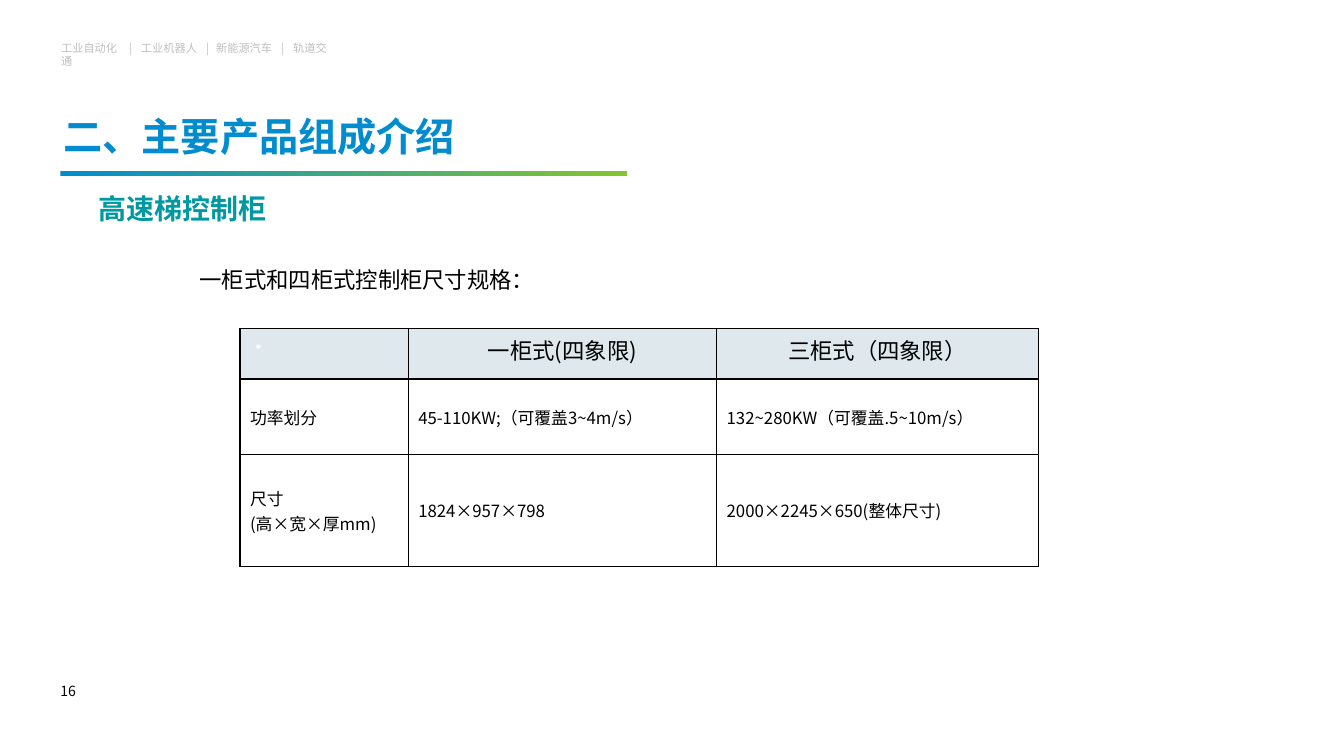
from dataclasses import dataclass

from lxml.etree import SubElement
from pptx import Presentation
from pptx.dml.color import RGBColor
from pptx.enum.shapes import MSO_SHAPE
from pptx.enum.text import MSO_ANCHOR, PP_ALIGN
from pptx.oxml.ns import qn
from pptx.util import Pt


@dataclass(frozen=True)
class Theme:
    font: str = "Noto Sans CJK SC"
    blue: str = "008CCF"
    green: str = "85C52F"
    teal: str = "0099A1"
    grey: str = "BFBFBF"
    black: str = "000000"
    white: str = "FFFFFF"
    header_fill: str = "DFE9ED"
    tiny: float = 8
    small: float = 10
    body: float = 12
    large: float = 16
    subtitle: float = 20
    title: float = 28


THEME = Theme()
SECTORS = ["工业自动化", "工业机器人", "新能源汽车", "轨道交通"]
SECTOR_TABS = [48.6, 57.1, 103.6, 110.7, 157.1, 165.7]
SPECS = [
    ["·", "一柜式(四象限)", "三柜式（四象限）"],
    ["功率划分", "45-110KW;（可覆盖3~4m/s）", "132~280KW（可覆盖.5~10m/s）"],
    ["尺寸\n(高×宽×厚mm)", "1824×957×798", "2000×2245×650(整体尺寸)"],
]
COLUMN_WIDTHS = [120.2, 220.3, 229.7]
ROW_HEIGHTS = [36, 54, 80]


def write(frame, text, size=THEME.body, color=THEME.black, bold=False,
          align=PP_ALIGN.LEFT, anchor=MSO_ANCHOR.TOP, after=0, tabs=()):
    frame.word_wrap = True
    frame.vertical_anchor = anchor
    for index, line in enumerate(text.split("\n")):
        paragraph = frame.paragraphs[0] if index == 0 else frame.add_paragraph()
        paragraph.alignment = align
        paragraph.space_after = Pt(after)
        if tabs:
            tab_list = SubElement(paragraph._p.get_or_add_pPr(), qn("a:tabLst"))
            for stop in tabs:
                SubElement(tab_list, qn("a:tab"), pos=str(Pt(stop)), algn="l")
        run = paragraph.add_run()
        run.text = line
        run.font.size = Pt(size)
        run.font.bold = bold
        run.font.color.rgb = RGBColor.from_string(color)
        run.font.name = THEME.font
        SubElement(run._r.get_or_add_rPr(), qn("a:ea"), typeface=THEME.font)


def add_text(slide, box, text, inset=(7.2, 3.6), **style):
    frame = slide.shapes.add_textbox(*map(Pt, box)).text_frame
    frame.margin_left = frame.margin_right = Pt(inset[0])
    frame.margin_top = frame.margin_bottom = Pt(inset[1])
    write(frame, text, **style)


def add_sector_line(slide, box):
    add_text(slide, box, "\t|\t".join(SECTORS), inset=(5.4, 2.9),
             size=THEME.tiny, color=THEME.grey, tabs=SECTOR_TABS)


def add_heading(slide, left, top, width):
    # Title
    add_text(slide, (left, top, width, 51), "二、主要产品组成介绍", inset=(2.2, 2.2),
             size=THEME.title, color=THEME.blue, bold=True, anchor=MSO_ANCHOR.MIDDLE)
    # Gradient rule below the title
    rule = slide.shapes.add_shape(
        MSO_SHAPE.RECTANGLE, Pt(left), Pt(top + 51), Pt(404.6), Pt(3.6))
    rule.shadow.inherit = False
    rule.line.fill.background()
    rule.fill.gradient()
    rule.fill.gradient_angle = 0
    ends = ((0, THEME.blue), (1, THEME.green))
    for stop, (position, color) in zip(rule.fill.gradient_stops, ends):
        stop.position = position
        stop.color.rgb = RGBColor.from_string(color)
    # Subtitle
    add_text(slide, (left + 20.2, top + 62, 465, 36), "高速梯控制柜",
             size=THEME.subtitle, color=THEME.teal, bold=True)


def set_borders(cell):
    properties = cell._tc.get_or_add_tcPr()
    for index, side in enumerate(("lnL", "lnR", "lnT", "lnB")):
        border = properties.makeelement(qn(f"a:{side}"), {"w": str(Pt(1))})
        properties.insert(index, border)
        SubElement(SubElement(border, qn("a:solidFill")), qn("a:srgbClr"), val=THEME.black)


def add_spec_table(slide, left, top):
    table = slide.shapes.add_table(
        len(SPECS), len(COLUMN_WIDTHS), Pt(left), Pt(top),
        Pt(sum(COLUMN_WIDTHS)), Pt(sum(ROW_HEIGHTS))).table
    table.first_row = table.horz_banding = False
    for column, width in zip(table.columns, COLUMN_WIDTHS):
        column.width = Pt(width)
    for row, (height, texts) in enumerate(zip(ROW_HEIGHTS, SPECS)):
        table.rows[row].height = Pt(height)
        for column, text in enumerate(texts):
            cell = table.cell(row, column)
            if row == 0:
                cell.fill.solid()
                cell.fill.fore_color.rgb = RGBColor.from_string(THEME.header_fill)
            else:
                cell.fill.background()
            if row == column == 0:
                style = dict(color=THEME.white, bold=True)
            elif row == 0:
                style = dict(size=THEME.large, align=PP_ALIGN.CENTER)
            else:
                style = {}
            write(cell.text_frame, text, **style)
            cell.vertical_anchor = MSO_ANCHOR.MIDDLE if row else MSO_ANCHOR.TOP
            set_borders(cell)


def add_specs(slide, left, top):
    add_text(slide, (left, top, 528, 26.6), "一柜式和四柜式控制柜尺寸规格：",
             size=THEME.large, after=6)
    add_spec_table(slide, left + 36, top + 48.2)


def add_page_number(slide, box):
    add_text(slide, box, "16", inset=(0, 0), size=THEME.small, anchor=MSO_ANCHOR.MIDDLE)


def main():
    deck = Presentation()
    deck.slide_width, deck.slide_height = Pt(960), Pt(540)
    slide = deck.slides.add_slide(deck.slide_layouts[6])
    add_sector_line(slide, (38.2, 26.6, 205.2, 15.1))
    add_heading(slide, 43.2, 71.3, 873.4)
    add_specs(slide, 135.4, 186.5)
    add_page_number(slide, (43.2, 479.5, 20.2, 28))
    deck.save("out.pptx")


if __name__ == "__main__":
    main()
